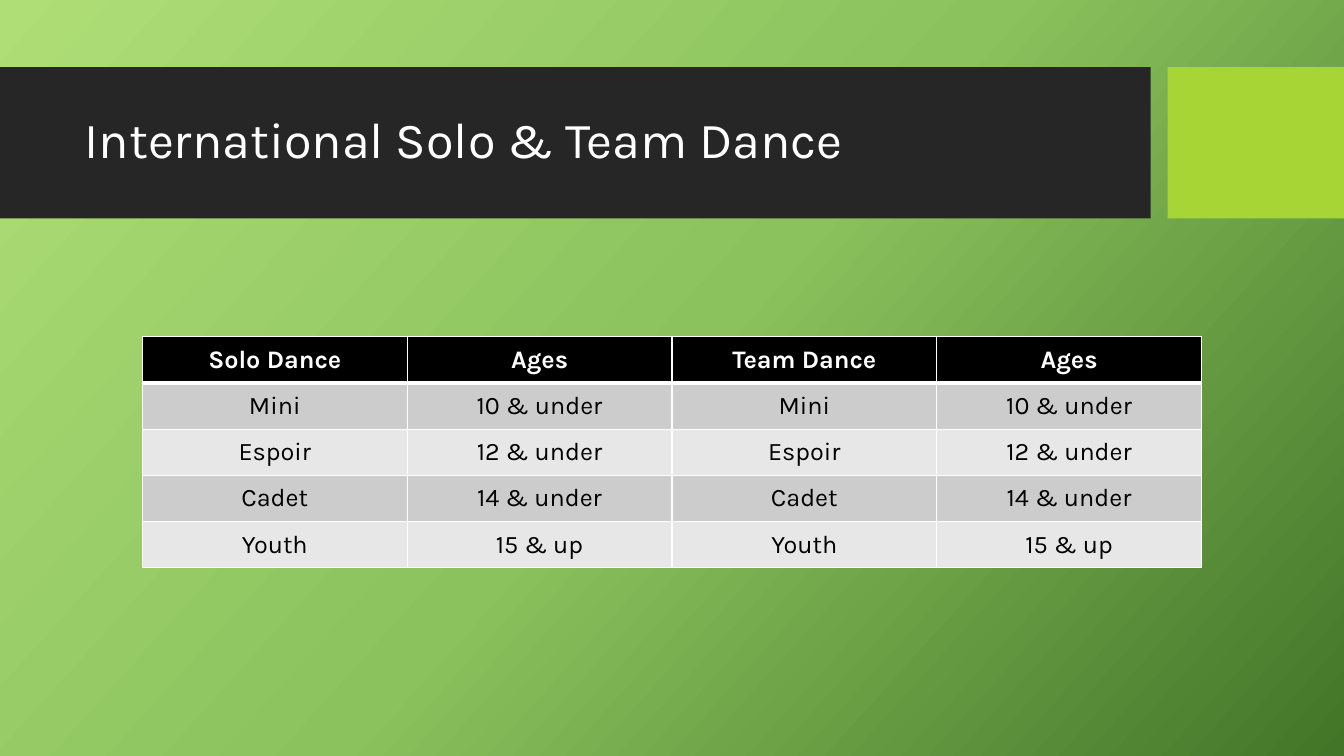
from pptx import Presentation
from pptx.dml.color import RGBColor
from pptx.enum.shapes import MSO_SHAPE as Shape
from pptx.enum.text import MSO_ANCHOR as Anchor, PP_ALIGN as Align
from pptx.oxml import parse_xml
from pptx.oxml.ns import nsdecls
from pptx.util import Inches, Pt

COLORS = {
    "white": "FFFFFF", "black": "000000", "banner": "262626", "accent": "A7D535",
    "odd": "CCCCCC", "even": "E7E7E7",
    "light": "AFDE77", "middle": "8BC25D", "dark": "437528",
}
FONT = "Karla"
UNIT = Inches(1 / 12)
COLUMNS, ROWS = 160, 90
GROUPS = ["Mini", "Espoir", "Cadet", "Youth"]
AGES = ["10 & under", "12 & under", "14 & under", "15 & up"]


def color(name):
    return RGBColor.from_string(COLORS[name])


def grid(*lengths):
    return [round(length * UNIT) for length in lengths]


def write(frame, text, size=18, tint="black", bold=False, align=Align.LEFT, spacing=None):
    frame.word_wrap = True
    para = frame.paragraphs[0]
    para.alignment = align
    para.line_spacing = spacing
    span = para.add_run()
    span.text = text
    span.font.name = FONT
    span.font.size = Pt(size)
    span.font.bold = bold
    span.font.color.rgb = color(tint)


def add_background(page):
    stops = "".join(
        f'<a:gs pos="{place * 1000}"><a:srgbClr val="{COLORS[name]}"/></a:gs>'
        for place, name in [(0, "light"), (50, "middle"), (100, "dark")])
    page.element.cSld.insert(0, parse_xml(
        f'<p:bg {nsdecls("p", "a")}><p:bgPr><a:gradFill rotWithShape="1">'
        f'<a:gsLst>{stops}</a:gsLst><a:lin ang="{42 * 60000}" scaled="0"/>'
        f'</a:gradFill><a:effectLst/></p:bgPr></p:bg>'))


def add_block(page, box, tint):
    block = page.shapes.add_shape(Shape.RECTANGLE, *grid(*box))
    block.shadow.inherit = False
    block.fill.solid()
    block.fill.fore_color.rgb = color(tint)
    block.line.fill.background()


def add_banner(page, box, title):
    left, top, width, height = box
    accent_width, gap = 21, 2
    banner_width = width - accent_width - gap
    add_block(page, (left, top, banner_width, height), "banner")
    add_block(page, (left + banner_width + gap, top, accent_width, height), "accent")
    title_box = page.shapes.add_textbox(
        *grid(left + 8.9, top + 1.8, banner_width - 10.9, height - 3.8))
    title_box.text_frame.vertical_anchor = Anchor.MIDDLE
    write(title_box.text_frame, title, size=36, tint="white", spacing=0.9)


def add_borders(cell, **widths):
    for side, width in widths.items():
        cell._tc.get_or_add_tcPr().append(parse_xml(
            f'<a:ln{side} {nsdecls("a")} w="{Pt(width)}"><a:solidFill>'
            f'<a:srgbClr val="{COLORS["white"]}"/></a:solidFill></a:ln{side}>'))


def add_age_table(page, box, rows):
    table = page.shapes.add_table(len(rows), len(rows[0]), *grid(*box)).table
    for row_index, texts in enumerate(rows):
        header = row_index == 0
        fill = "black" if header else "odd" if row_index % 2 else "even"
        for column_index, text in enumerate(texts):
            cell = table.cell(row_index, column_index)
            add_borders(cell, L=1, R=1, T=3 if row_index == 1 else 1, B=3 if header else 1)
            cell.fill.solid()
            cell.fill.fore_color.rgb = color(fill)
            cell.vertical_anchor = Anchor.MIDDLE
            write(cell.text_frame, text, tint="white" if header else "black",
                  bold=header, align=Align.CENTER)


def main():
    deck = Presentation()
    deck.slide_width, deck.slide_height = grid(COLUMNS, ROWS)
    page = deck.slides.add_slide(deck.slide_layouts[6])
    add_background(page)
    add_banner(page, (0, 8, COLUMNS, 18), "International Solo & Team Dance")
    rows = [["Solo Dance", "Ages", "Team Dance", "Ages"]]
    rows += [[group, age] * 2 for group, age in zip(GROUPS, AGES)]
    add_age_table(page, (16.95, 40.1, 126.1, 27.5), rows)
    deck.save("out.pptx")


if __name__ == "__main__":
    main()
